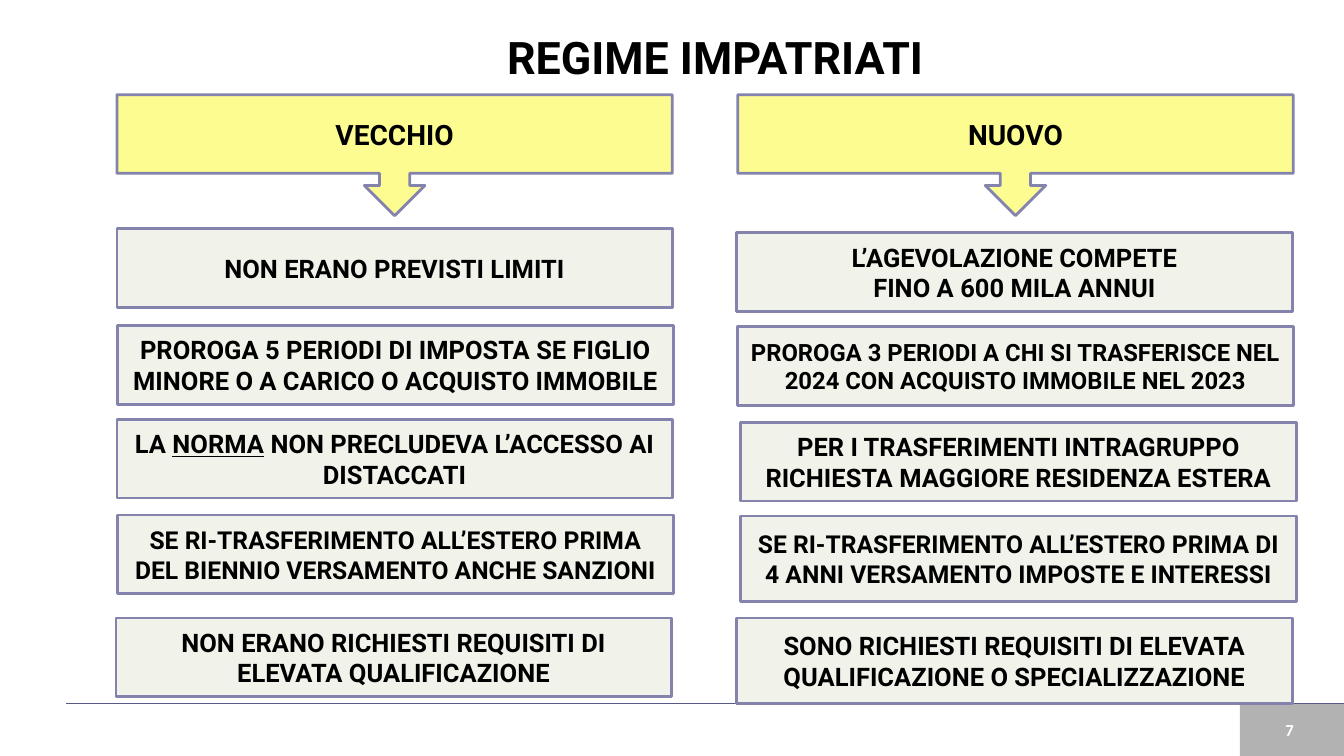
"""Builds the slide comparing the old and new regime for returning workers."""
from lxml.etree import SubElement
from pptx import Presentation
from pptx.dml.color import RGBColor
from pptx.enum.shapes import MSO_CONNECTOR, MSO_SHAPE
from pptx.enum.text import MSO_ANCHOR, PP_ALIGN
from pptx.oxml.ns import qn
from pptx.util import Pt

COLORS = {
    "text": "000000", "header": "FCFC91", "card": "F1F2E9",
    "border": "8383AD", "rule": "595988", "white": "FFFFFF",
}
TITLE = "REGIME IMPATRIATI"
PAGE_NUMBER = "7"
COLUMN_WIDTH = 396.7
HEADER_TOP, HEADER_HEIGHT = 67.7, 86.4
LOW, TALL = 56.2, 61.2
FOOTER_TOP = 502.6

# Each card: paragraphs, left shift, top, height, font size; _word_ is underlined.
COLUMNS = [
    ("VECCHIO", 83.5, [
        (["NON ERANO PREVISTI LIMITI"], 0, 163.4, LOW, 18.2),
        (["PROROGA 5 PERIODI DI IMPOSTA SE FIGLIO MINORE O A CARICO O ACQUISTO IMMOBILE"],
         0.7, 232.6, LOW, 18.2),
        (["LA _NORMA_ NON PRECLUDEVA L’ACCESSO AI DISTACCATI"], 0, 299.5, LOW, 18.2),
        (["SE RI-TRASFERIMENTO ALL’ESTERO PRIMA DEL BIENNIO VERSAMENTO ANCHE SANZIONI"],
         0.7, 367.9, LOW, 17.6),
        (["NON ERANO RICHIESTI REQUISITI DI ELEVATA QUALIFICAZIONE"],
         -0.7, 441.4, LOW, 18.2),
    ]),
    ("NUOVO", 527, [
        (["L’AGEVOLAZIONE COMPETE", "FINO A 600 MILA ANNUI"], -0.7, 166.3, LOW, 18.2),
        (["PROROGA 3 PERIODI A CHI SI TRASFERISCE NEL 2024 CON ACQUISTO IMMOBILE NEL 2023"],
         0, 233.3, LOW, 17),
        (["PER I TRASFERIMENTI INTRAGRUPPO RICHIESTA MAGGIORE RESIDENZA ESTERA"],
         2.2, 301.7, LOW, 18.2),
        (["SE RI-TRASFERIMENTO ALL’ESTERO PRIMA DI 4 ANNI VERSAMENTO IMPOSTE E INTERESSI"],
         2.2, 368.6, TALL, 17.6),
        (["SONO RICHIESTI REQUISITI DI ELEVATA QUALIFICAZIONE O SPECIALIZZAZIONE"],
         -0.7, 441.4, TALL, 18.2),
    ]),
]


def color(name):
    return RGBColor.from_string(COLORS[name])


def write(box, paragraphs, size, font="Roboto", ink="text"):
    frame = box.text_frame
    frame.word_wrap = True
    frame.vertical_anchor = MSO_ANCHOR.MIDDLE
    for number, text in enumerate(paragraphs):
        para = frame.add_paragraph() if number else frame.paragraphs[0]
        para.alignment = PP_ALIGN.CENTER
        for position, piece in enumerate(text.split("_")):
            span = para.add_run()
            span.text = piece
            span.font.name = font
            span.font.size = Pt(size)
            span.font.bold = True
            span.font.color.rgb = color(ink)
            if position % 2:
                span.font.underline = True


def add_box(page, kind, area, fill, border=None):
    box = page.shapes.add_shape(kind, *map(Pt, area))
    box.shadow.inherit = False
    box.fill.solid()
    box.fill.fore_color.rgb = color(fill)
    if border:
        box.line.color.rgb = color(border)
        box.line.width = Pt(2)
    else:
        box.line.fill.background()
    return box


def add_label(page, area, text, size, **style):
    box = page.shapes.add_textbox(*map(Pt, area))
    write(box, [text], size, **style)


def add_footer(page):
    block = add_box(page, MSO_SHAPE.RECTANGLE, (885.6, FOOTER_TOP, 74.4, 37.4), "text")
    tint = block.fill._xPr.find(qn("a:solidFill"))[0]
    SubElement(tint, qn("a:alpha"), val="30000")
    add_label(page, (882.7, FOOTER_TOP, 77, 37.4), PAGE_NUMBER, 12,
              font="Calibri", ink="white")
    rule = page.shapes.add_connector(
        MSO_CONNECTOR.STRAIGHT, Pt(47.5), Pt(FOOTER_TOP), Pt(960), Pt(FOOTER_TOP))
    rule.line.color.rgb = color("rule")
    rule.line.width = Pt(1)
    SubElement(rule._element.spPr, qn("a:effectLst"))


def main():
    deck = Presentation()
    deck.slide_width, deck.slide_height = Pt(960), Pt(540)
    page = deck.slides.add_slide(deck.slide_layouts[6])
    add_footer(page)
    add_label(page, (61.9, 18.7, 898.1, 43.2), TITLE, 32)
    for heading, left, cards in COLUMNS:
        header = add_box(page, MSO_SHAPE.DOWN_ARROW_CALLOUT,
                         (left, HEADER_TOP, COLUMN_WIDTH, HEADER_HEIGHT),
                         "header", "border")
        write(header, [heading], 20)
        for paragraphs, shift, top, height, size in cards:
            card = add_box(page, MSO_SHAPE.RECTANGLE,
                           (left + shift, top, COLUMN_WIDTH, height), "card", "border")
            write(card, paragraphs, size)
    deck.save("out.pptx")


if __name__ == "__main__":
    main()
